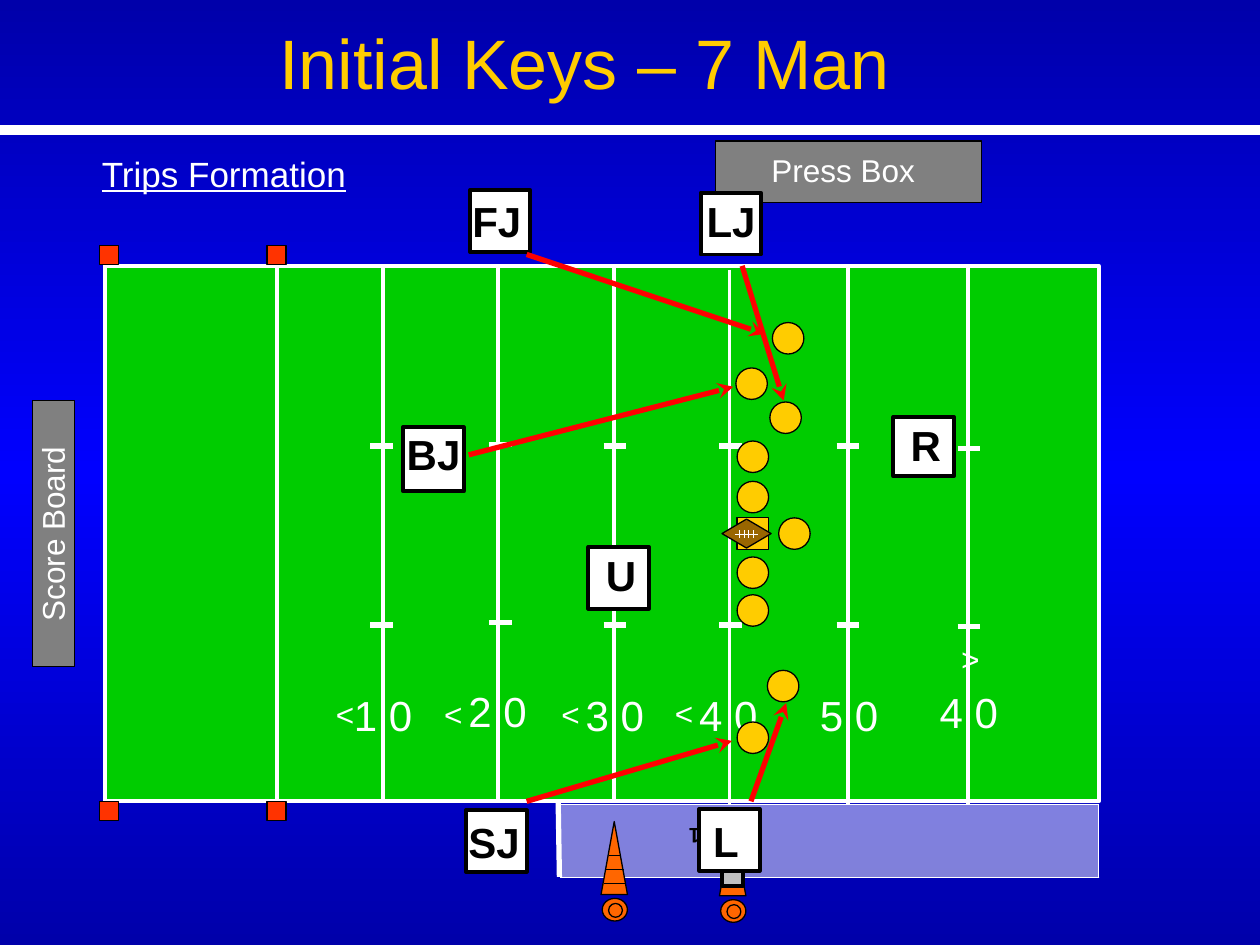
from copy import deepcopy
from dataclasses import dataclass

from lxml import etree
from pptx import Presentation
from pptx import util as u
from pptx.dml.color import RGBColor
from pptx.enum import dml, shapes, text
from pptx.oxml import ns


@dataclass(frozen=True)
class Theme:
    font: str = "Arial"
    title_size: int = 40
    heading_size: int = 20
    big_size: int = 24
    note_size: int = 18
    small_size: int = 12
    white: str = "FFFFFF"
    black: str = "000000"
    gold: str = "FFCC00"
    grass: str = "00CC00"
    grey: str = "808080"
    silver: str = "C0C0C0"
    pylon: str = "FF3300"
    cone: str = "FF6600"
    leather: str = "996600"
    red: str = "FF0000"
    sky: tuple = ((0, "0000AA"), (0.5, "0000FF"), (1, "0000AA"))


THEME = Theme()
SHAPE = shapes.MSO_SHAPE
FIELD_TOP, FIELD_HEIGHT = 2.11, 4.25

# number, line x, line top, hash left, upper hash, lower hash, number left, number top
YARDS = [
    ("1 0", 3.04, 2.11, 2.94, 3.54, 4.96, 2.61, 5.42),
    ("2 0", 3.95, 2.11, 3.88, 3.53, 4.94, 3.52, 5.39),
    ("3 0", 4.87, 2.11, 4.79, 3.54, 4.96, 4.45, 5.42),
    ("4 0", 5.79, 2.14, 5.71, 3.54, 4.96, 5.35, 5.42),
    ("5 0", 6.73, 2.13, 6.64, 3.54, 4.96, 6.31, 5.42),
    ("4 0", 7.68, 2.13, 7.6, 3.56, 4.97, 7.26, 5.4),
]
GOAL_MARKS = [(2.56, 5.47, 0), (3.42, 5.47, 0), (4.35, 5.47, 0), (5.25, 5.46, 0),
              (7.53, 5.06, 180)]
# name, box left, top, height, then text left, top, width
OFFICIALS = [
    ("FJ", 3.73, 1.51, 0.49, 3.65, 1.5, 0.67),
    ("U", 4.67, 4.34, 0.49, 4.71, 4.31, 0.34),
    ("SJ", 3.7, 6.43, 0.49, 3.62, 6.43, 0.67),
    ("R", 7.09, 3.31, 0.47, 7.13, 3.28, 0.34),
    (" L", 5.55, 6.42, 0.49, 5.47, 6.42, 0.67),
    ("LJ", 5.56, 1.53, 0.49, 5.51, 1.5, 0.76),
    ("BJ", 3.2, 3.39, 0.51, 3.13, 3.35, 0.66),
]
PLAYERS = [(5.85, 3.82), (5.85, 3.5), (5.85, 4.42), (5.85, 4.72), (6.18, 4.11),
           (5.85, 5.73), (6.09, 5.32), (5.84, 2.92), (6.13, 2.56), (6.11, 3.19)]
KEYS = [(4.18, 6.36, 5.81, 5.88), (4.18, 2.02, 6.07, 2.65), (3.72, 3.61, 5.82, 3.07),
        (5.96, 6.36, 6.24, 5.58), (5.89, 2.11, 6.22, 3.18)]


def set_all(target, values):
    for name, value in values.items():
        setattr(target, name, value)


def paint_background(page):
    fill = page.background.fill
    fill.gradient()
    fill.gradient_angle = 90
    stops = page._element.find(".//" + ns.qn("a:gsLst"))
    stops.append(deepcopy(stops[0]))
    for stop, (position, color) in zip(fill.gradient_stops, THEME.sky):
        stop.position = position
        stop.color.rgb = RGBColor.from_string(color)


def add_box(canvas, kind, at, fill=None, line=THEME.black, width=0.75, rotation=0):
    box = canvas.add_shape(kind, *map(u.Inches, at))
    box.shadow.inherit = False
    box.rotation = rotation
    if fill:
        box.fill.solid()
        box.fill.fore_color.rgb = RGBColor.from_string(fill)
    else:
        box.fill.background()
    box.line.color.rgb = RGBColor.from_string(line)
    box.line.width = u.Pt(width)
    return box


def add_line(canvas, ends, color=THEME.white, width=2.25, arrow=False):
    line = canvas.add_connector(shapes.MSO_CONNECTOR.STRAIGHT, *map(u.Inches, ends))
    line.line.color.rgb = RGBColor.from_string(color)
    line.line.width = u.Pt(width)
    if arrow:
        etree.SubElement(line.line._get_or_add_ln(), ns.qn("a:tailEnd"), type="stealth")
    etree.SubElement(line._element.spPr, ns.qn("a:effectLst"))


def add_text(canvas, words, at, size, color=THEME.white, align=text.PP_ALIGN.LEFT,
             wrap=True, rotation=0, **font):
    box = canvas.add_textbox(*map(u.Inches, at))
    box.rotation = rotation
    box.text_frame.word_wrap = wrap
    para = box.text_frame.paragraphs[0]
    para.alignment = align
    span = para.add_run()
    span.text = words
    set_all(span.font, {"name": THEME.font, "size": u.Pt(size), **font})
    span.font.color.rgb = RGBColor.from_string(color)


def add_field(canvas):
    bottom = FIELD_TOP + FIELD_HEIGHT
    right = text.PP_ALIGN.RIGHT
    add_box(canvas, SHAPE.RECTANGLE, (0.83, FIELD_TOP, 7.89, FIELD_HEIGHT),
            THEME.grass, THEME.white, 2.25)
    add_line(canvas, (2.2, FIELD_TOP, 2.2, bottom))
    for left in (2.12, 0.79):
        for top in (1.95, bottom):
            add_box(canvas, SHAPE.RECTANGLE, (left, top, 0.15, 0.15), THEME.pylon)
    for number, x, top, hash_left, upper, lower, left, number_top in YARDS:
        add_line(canvas, (x, top, x, top + FIELD_HEIGHT))
        for y in (upper, lower):
            add_line(canvas, (hash_left, y, hash_left + 0.18, y), width=3)
        add_text(canvas, number, (left, number_top, 0.76, 0.5), THEME.big_size, align=right)
    for left, top, rotation in GOAL_MARKS:
        add_text(canvas, "<", (left, top, 0.35, 0.4), THEME.note_size, align=right,
                 wrap=False, rotation=rotation)


def add_team_area(canvas):
    add_line(canvas, (4.43, 6.36, 4.44, 6.96), width=3)
    area = add_box(canvas, SHAPE.RECTANGLE, (4.44, 6.38, 4.28, 0.58),
                   THEME.white, THEME.white, 0.25)
    area.line.dash_style = dml.MSO_LINE.ROUND_DOT
    color = area._element.spPr.find(ns.qn("a:solidFill"))[0]
    etree.SubElement(color, ns.qn("a:alpha"), val="50000")


def add_cone(page, center, top, stripes):
    """Stripes are pairs of distance below the tip and half width."""
    canvas = page.shapes.add_group_shape().shapes
    add_box(canvas, SHAPE.ISOSCELES_TRIANGLE, (center - 0.11, top, 0.21, 0.58), THEME.cone)
    add_box(canvas, SHAPE.OVAL, (center - 0.1, top + 0.61, 0.2, 0.18), THEME.cone)
    for drop, half in stripes:
        y = top + drop
        add_line(canvas, (center - half, y, center + half, y), THEME.black, 0.75)
    add_box(canvas, SHAPE.OVAL, (center - 0.05, top + 0.65, 0.11, 0.11))


def add_down_marker(page):
    canvas = page.shapes.add_group_shape().shapes
    add_box(canvas, SHAPE.RECTANGLE, (5.73, 6.82, 0.17, 0.21), THEME.silver, width=2.25)
    add_text(canvas, "1", (5.37, 6.49, 0.29, 0.3), THEME.small_size, THEME.black,
             wrap=False, rotation=180, bold=True)


def add_official(page, name, left, top, height, text_left, text_top, text_width):
    canvas = page.shapes.add_group_shape().shapes
    add_box(canvas, SHAPE.RECTANGLE, (left, top, 0.48, height), THEME.white, width=2.25)
    add_text(canvas, name, (text_left, text_top, text_width, 0.5), THEME.big_size,
             THEME.black, bold=True)


def add_ball(page):
    canvas = page.shapes.add_group_shape().shapes
    add_box(canvas, SHAPE.FLOWCHART_DECISION, (5.73, 4.12, 0.39, 0.23), THEME.leather)
    add_line(canvas, (5.83, 4.24, 6.02, 4.24), width=0.75)
    for x in (5.87, 5.91, 5.94, 5.98):
        add_line(canvas, (x, 4.21, x, 4.27), width=0.75)


def main():
    deck = Presentation()
    deck.slide_width, deck.slide_height = u.Inches(10), u.Inches(7.5)
    page = deck.slides.add_slide(deck.slide_layouts[6])
    canvas = page.shapes
    right = text.PP_ALIGN.RIGHT
    paint_background(page)
    add_box(canvas, SHAPE.RECTANGLE, (6.49, 0.31, 0.49, 2.11), THEME.grey, rotation=270)
    add_line(canvas, (0, 1.03, 10, 1.03), width=6)
    add_text(canvas, "Trips Formation", (0.71, 1.16, 2.15, 1.27), THEME.heading_size,
             wrap=False, underline=True)
    add_text(canvas, "Press Box", (6.02, 1.15, 1.34, 0.4), THEME.note_size,
             align=right, wrap=False)
    add_field(canvas)
    add_team_area(canvas)
    stripes = [(0.38, 0.07), (0.49, 0.09)]
    add_cone(page, 5.82, 6.53, stripes)
    add_down_marker(page)
    add_cone(page, 4.88, 6.52, stripes + [(0.27, 0.05)])
    add_box(canvas, SHAPE.RECTANGLE, (0.26, 3.18, 0.33, 2.11), THEME.grey)
    add_text(canvas, "Score Board", (-0.38, 4.04, 1.59, 0.4), THEME.note_size,
             align=right, rotation=270)
    add_text(canvas, "Initial Keys – 7 Man", (2.12, 0.11, 6.15, 0.77), THEME.title_size,
             THEME.gold)
    for official in OFFICIALS:
        add_official(page, *official)
    add_box(canvas, SHAPE.RECTANGLE, (5.85, 4.11, 0.25, 0.25), THEME.gold)
    for left, top in PLAYERS:
        add_box(canvas, SHAPE.OVAL, (left, top, 0.25, 0.25), THEME.gold)
    add_ball(page)
    for ends in KEYS:
        add_line(canvas, ends, THEME.red, 3, arrow=True)
    deck.save("out.pptx")


if __name__ == "__main__":
    main()
